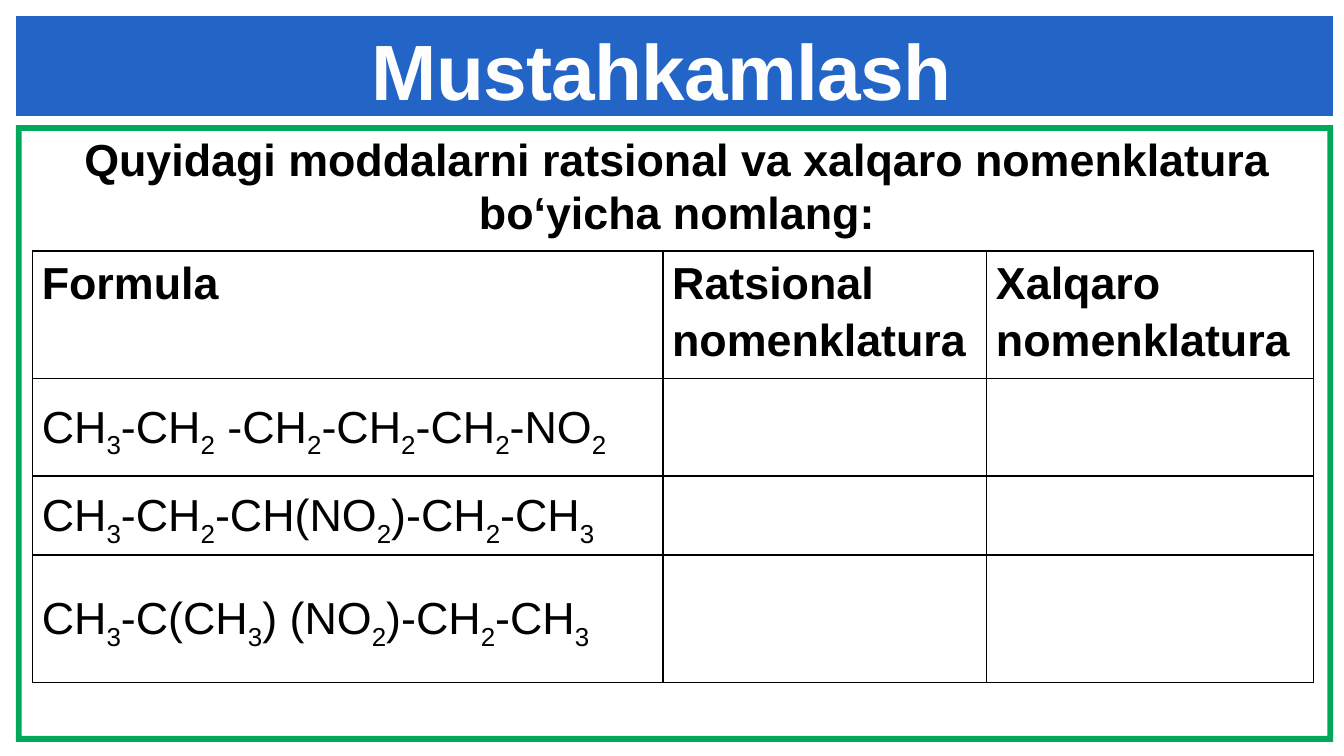
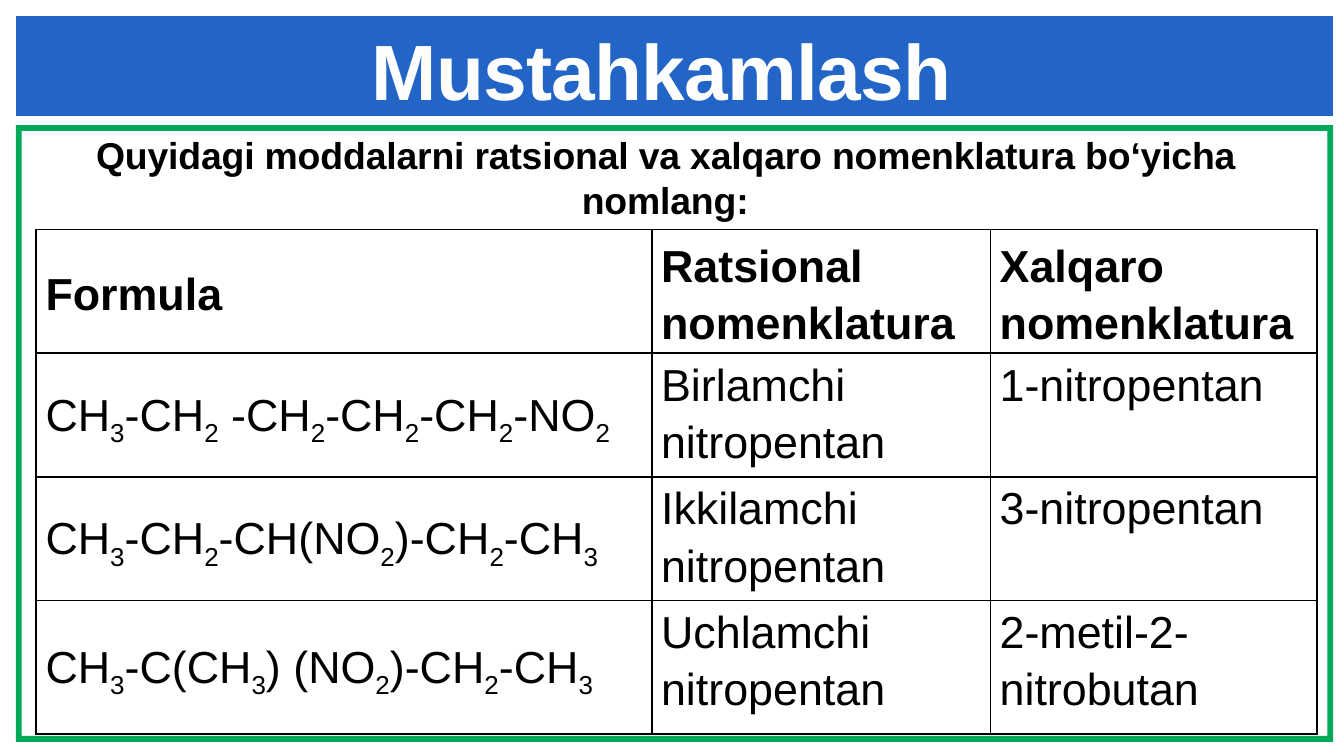
from dataclasses import dataclass
from itertools import groupby
from typing import NamedTuple

from lxml import etree
from pptx import Presentation, util as u
from pptx.dml.color import RGBColor
from pptx.enum import text
from pptx.oxml.ns import qn


@dataclass(frozen=True)
class Theme:
    font: str = "Arial"
    blue: str = "2365C7"
    green: str = "00A859"
    white: str = "FEFEFE"
    black: str = "000000"
    title_size: float = 42
    table_size: float = 24
    border: float = 1


class Area(NamedTuple):
    left: float
    top: float
    width: float
    height: float

    def lengths(self) -> list[u.Length]:
        return [u.Pt(value) for value in self]


class Style(NamedTuple):
    size: float
    color: str
    bold: bool = False
    spacing: float = 0


@dataclass(frozen=True)
class Exercise:
    question_area: Area
    question_style: Style
    table_area: Area
    columns: tuple[float, ...]
    rows: tuple[float, ...]
    header_anchor: text.MSO_ANCHOR
    answers: tuple[tuple[str, str], ...]


THEME = Theme()
TITLE = "Mustahkamlash "
QUESTION = "Quyidagi moddalarni ratsional va xalqaro nomenklatura bo‘yicha nomlang:"
HEADERS = ("Formula", "Ratsional nomenklatura", "Xalqaro nomenklatura")
FORMULAS = (
    "CH3-CH2 -CH2-CH2-CH2-NO2",
    "CH3-CH2-CH(NO2)-CH2-CH3",
    "CH3-C(CH3) (NO2)-CH2-CH3",
)
TOP, MIDDLE = text.MSO_ANCHOR.TOP, text.MSO_ANCHOR.MIDDLE

EXERCISES = (
    Exercise(
        Area(23.8, 66.4, 677.5, 65.5), Style(24, THEME.black, True),
        Area(17.4, 134.5, 686.2, 231.1),
        (337.7, 173.5, 175), (68.2, 52.4, 42.3, 68.2), TOP,
        (("", ""),) * 3,
    ),
    Exercise(
        Area(38.9, 67, 635, 55.4), Style(20, THEME.black, True, -0.1),
        Area(19.4, 123, 686.2, 263.5),
        (329.8, 181.4, 175), (65.5, 62, 64.8, 71.4), MIDDLE,
        (("Birlamchi nitropentan", "1-nitropentan"),
         ("Ikkilamchi nitropentan", "3-nitropentan"),
         ("Uchlamchi nitropentan", "2-metil-2-nitrobutan")),
    ),
)


# Text
def add_span(para, words: str, style: Style, subscript: bool = False) -> None:
    span = para.add_run()
    span.text = words
    font = span.font
    font.name, font.size, font.bold = THEME.font, u.Pt(style.size), style.bold
    font.color.rgb = RGBColor.from_string(style.color)
    properties = span._r.get_or_add_rPr()
    if style.spacing:
        properties.set("spc", str(round(style.spacing * 100)))
    if subscript:
        properties.set("baseline", "-25000")


def add_formula(para, formula: str, style: Style) -> None:
    """Every digit of a formula is a subscript."""
    for is_digit, letters in groupby(formula, str.isdigit):
        add_span(para, "".join(letters), style, is_digit)


def add_centred_text(page, area: Area, words: str, style: Style,
                     inset: tuple[float, float], line_spacing: float = 1.0) -> None:
    box = page.shapes.add_textbox(*area.lengths())
    frame = box.text_frame
    frame.word_wrap = True
    frame.vertical_anchor = MIDDLE
    frame.margin_left = frame.margin_right = u.Pt(inset[0])
    frame.margin_top = frame.margin_bottom = u.Pt(inset[1])
    para = frame.paragraphs[0]
    para.alignment = text.PP_ALIGN.CENTER
    para.line_spacing = line_spacing
    add_span(para, words, style)


# Shared frame and title band
def add_outline(page, contours: list[list[tuple[float, float]]], color: str) -> None:
    paths = [[(u.Pt(x), u.Pt(y)) for x, y in contour] for contour in contours]
    builder = page.shapes.build_freeform(*paths[0][0])
    builder.add_line_segments(paths[0][1:])
    for path in paths[1:]:
        builder.move_to(*path[0])
        builder.add_line_segments(path[1:])
    shape = builder.convert_to_shape()
    shape.shadow.inherit = False
    shape.fill.solid()
    shape.fill.fore_color.rgb = RGBColor.from_string(color)
    shape.line.fill.background()


def add_background(page) -> None:
    left, right, top, bottom, edge = 8.6, 714.2, 67, 397.4, 3.1
    inner_top, inner_bottom = top + edge, bottom - edge
    right_edge = [(right, inner_top), (right - edge, inner_top),
                  (right - edge, inner_bottom), (right, inner_bottom)]
    other_edges = [(right, top), (left, top), (left, bottom), (right, bottom),
                   (right, inner_bottom), (left + edge, inner_bottom),
                   (left + edge, inner_top), (right, inner_top)]
    add_outline(page, [right_edge, other_edges], THEME.green)
    band = [(right, 8.6), (left, 8.6), (left, 62.3), (right, 62.3)]
    add_outline(page, [band], THEME.blue)
    add_centred_text(page, Area(54, 16.5, 612, 48.2), TITLE,
                     Style(THEME.title_size, THEME.white, True, -0.4), (0, 0), 0.86)


# Table
def add_borders(cell) -> None:
    properties = cell._tc.get_or_add_tcPr()
    for side in ("lnL", "lnR", "lnT", "lnB"):
        line = etree.SubElement(properties, qn(f"a:{side}"),
                                w=str(u.Pt(THEME.border)))
        fill = etree.SubElement(line, qn("a:solidFill"))
        etree.SubElement(fill, qn("a:srgbClr"), val=THEME.black)


def add_naming_table(page, exercise: Exercise) -> None:
    contents = [HEADERS] + [(formula, *names) for formula, names
                            in zip(FORMULAS, exercise.answers)]
    table = page.shapes.add_table(len(contents), len(HEADERS),
                                  *exercise.table_area.lengths()).table
    table.first_row = table.horz_banding = False
    for column, width in zip(table.columns, exercise.columns):
        column.width = u.Pt(width)
    for row, height in zip(table.rows, exercise.rows):
        row.height = u.Pt(height)

    for i, row_words in enumerate(contents):
        for j, words in enumerate(row_words):
            cell = table.cell(i, j)
            add_borders(cell)
            cell.fill.background()
            cell.margin_left = cell.margin_right = u.Pt(5)
            cell.margin_top = cell.margin_bottom = u.Pt(0)
            is_header, is_formula = i == 0, i > 0 and j == 0
            if is_header:
                cell.vertical_anchor = exercise.header_anchor
            else:
                cell.vertical_anchor = MIDDLE if is_formula else TOP
            if not words:
                continue
            para = cell.text_frame.paragraphs[0]
            para.line_spacing = 1.15
            style = Style(THEME.table_size, THEME.black, is_header)
            write = add_formula if is_formula else add_span
            write(para, words, style)


def main() -> None:
    deck = Presentation()
    deck.slide_width, deck.slide_height = u.Pt(720), u.Pt(405)
    for exercise in EXERCISES:
        page = deck.slides.add_slide(deck.slide_layouts[6])
        add_background(page)
        add_centred_text(page, exercise.question_area, QUESTION,
                         exercise.question_style, (7.2, 3.6))
        add_naming_table(page, exercise)
    deck.save("out.pptx")


if __name__ == "__main__":
    main()
